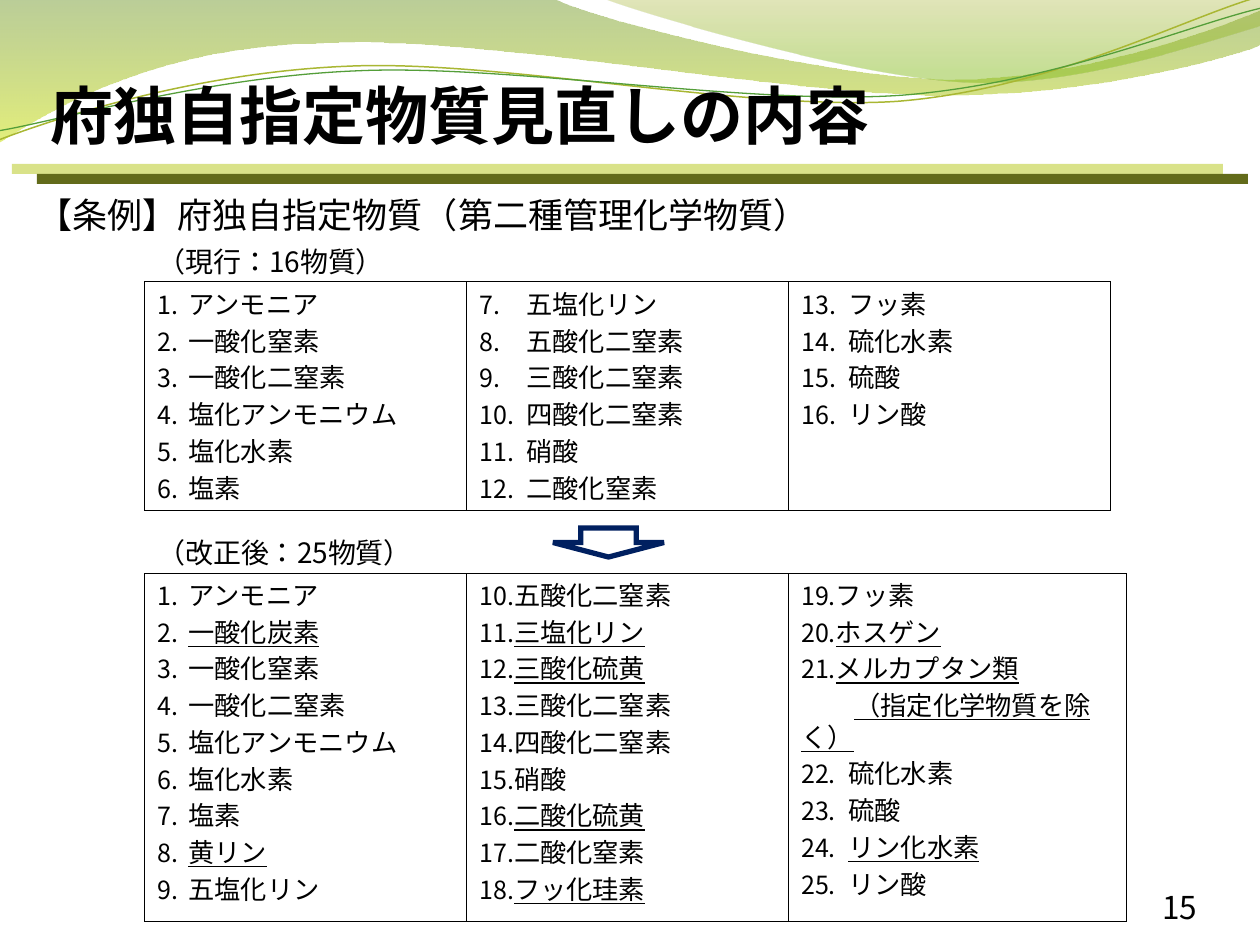
from lxml import etree
from pptx import Presentation, util as u
from pptx.dml.color import RGBColor
from pptx.enum import shapes, text
from pptx.oxml import ns

PX = 914400 / 126
FONT = "Noto Sans CJK JP"
NARROW, WIDE = 31, 47  # hanging indents of the numbered lists


def px(n):
    return u.Emu(round(n * PX))


def color(value):
    return RGBColor.from_string(value)


def sub(parent, tag, **attrs):
    return etree.SubElement(parent, ns.qn(tag), {k: str(v) for k, v in attrs.items()})


def style(s, fill=None, line=None, width=None):
    s.shadow.inherit = False
    s._element.remove(s._element.find(ns.qn("p:style")))
    if fill:
        s.fill.solid()
        s.fill.fore_color.rgb = color(fill)
    else:
        s.fill.background()
    if line:
        s.line.color.rgb = color(line)
        if width:
            s.line.width = u.Pt(width)
        sub(s.line._get_or_add_ln(), "a:miter", lim=800000)
    else:
        s.line.fill.background()
    return s


def add_shape(slide, kind, box, **fmt):
    return style(slide.shapes.add_shape(kind, *map(px, box)), **fmt)


def add_run(p, words, size=15, bold=False, underline=False):
    r = p.add_run()
    r.text = words
    f = r.font
    f.size, f.bold, f.underline, f.name = u.Pt(size), bold, underline, FONT
    f.color.rgb = color("000000")
    rPr = r._r.get_or_add_rPr()
    rPr.set("lang", "ja-JP")
    sub(rPr, "a:ea", typeface=FONT)


def add_text(slide, box, words, align="LEFT", anchor="TOP",
             inset=True, before=0, spacing=None, **fmt):
    tf = slide.shapes.add_textbox(*map(px, box)).text_frame
    tf.word_wrap = True
    tf.vertical_anchor = text.MSO_ANCHOR[anchor]
    if not inset:
        tf.margin_left = tf.margin_right = tf.margin_top = tf.margin_bottom = 0
    p = tf.paragraphs[0]
    p.alignment = text.PP_ALIGN[align]
    p.space_before = u.Pt(before)
    p.line_spacing = spacing
    add_run(p, words, **fmt)


def add_path(slide, start, segments, closed=False, **fmt):
    """Outline of straight steps (x, y) and cubic curves (two handles and an end)."""
    points = [seg[i:i + 2] for seg in segments for i in range(0, len(seg), 2)]
    builder = slide.shapes.build_freeform(*start, scale=PX)
    builder.add_line_segments(points, close=closed)
    s = builder.convert_to_shape()
    steps = iter(list(s._element.iter(ns.qn("a:lnTo"))))
    for seg in segments:
        step = next(steps)
        if len(seg) == 6:
            step.tag = ns.qn("a:cubicBezTo")
            for _ in range(2):
                handle = next(steps)
                step.append(handle[0])
                handle.getparent().remove(handle)
    return style(s, **fmt)


def add_band(slide, start, segments, stops):
    s = add_path(slide, start, segments, closed=True)
    s.fill.gradient()
    grad = s._element.spPr.find(ns.qn("a:gradFill"))
    for child in list(grad):
        grad.remove(child)
    stop_list = sub(grad, "a:gsLst")
    for pos, value, alpha in stops:
        stop = sub(stop_list, "a:gs", pos=pos * 1000)
        sub(sub(stop, "a:srgbClr", val=value), "a:alpha", val=alpha * 1000)
    sub(grad, "a:lin", ang=90 * 60000, scaled=0)


def add_waves(slide):
    add_band(slide, (0, 0),
             [(554, -1), (598, 21, 835, 79, 955, 79), (1075, 79, 1207, 33, 1260, 11),
              (1261, 45), (1239, 55, 1095, 96, 940, 95), (784, 95, 480, 35, 324, 43),
              (163, 45, 58, 105, -1, 142)],
             [(0, "69921C", 45), (100, "CCE10F", 55)])
    add_band(slide, (604, -1),
             [(641, 14, 859, 78, 968, 82), (1077, 87, 1211, 40, 1260, 26), (1260, 0)],
             [(0, "9BAA1A", 30), (80, "81BA16", 45)])
    strands = [
        ((-3, 110), [(58, 90, 198, 52, 348, 53), (499, 53, 744, 117, 896, 114),
                     (1049, 109, 1185, 45, 1260, 27)], "A9B733", 0.85),
        ((-3, 101), [(57, 94, 205, 57, 357, 58), (507, 58, 751, 112, 902, 108),
                     (1054, 103, 1188, 52, 1263, 38)], "549E39", 0.75),
    ]
    for start, segments, line, width in strands:
        s = add_path(slide, start, segments, line=line, width=width)
        s.rotation = 357.3


def add_header(slide, x, y):
    for dx, dy, fill in ((0, 0, "D9E289"), (25, 10, "626B1A")):
        add_shape(slide, shapes.MSO_SHAPE.RECTANGLE, (x + dx, y + dy, 1211, 10), fill=fill)
    add_text(slide, (x + 26, y - 95, 1255, 90), "府独自指定物質見直しの内容",
             anchor="MIDDLE", size=36, bold=True)
    add_text(slide, (x + 13, y + 19, 1186, 53), "【条例】府独自指定物質（第二種管理化学物質）",
             size=20, before=12, spacing=1.1)


def add_list(slide, box, parts):
    """Each part: first number (None for a plain line), indent, items; * underlines."""
    s = add_shape(slide, shapes.MSO_SHAPE.RECTANGLE, box, line="000000")
    tf = s.text_frame
    tf.word_wrap = True
    tf.vertical_anchor = text.MSO_ANCHOR.TOP
    lines = [(start, indent, item) for start, indent, items in parts for item in items.split()]
    for i, (start, indent, item) in enumerate(lines):
        p = tf.add_paragraph() if i else tf.paragraphs[0]
        p.alignment = text.PP_ALIGN.LEFT
        p.space_before = u.Pt(3)
        pPr = p._p.get_or_add_pPr()
        pPr.set("marL", str(px(indent) if start else 0))
        pPr.set("indent", str(px(-indent if start else indent)))
        if start:
            sub(pPr, "a:buSzPct", val=95000)
            sub(pPr, "a:buFont", typeface=FONT)
            sub(pPr, "a:buAutoNum", type="arabicPeriod", startAt=start)
        add_run(p, item.lstrip("*"), underline=item.startswith("*"))


def add_substances(slide, x, y, height, label, columns, last_width=322):
    add_text(slide, (x, y - 44, 322, 44), label, size=16)
    for i, parts in enumerate(columns):
        width = last_width if i == len(columns) - 1 else 322
        add_list(slide, (x + 322 * i, y, width, height), parts)


def main():
    prs = Presentation()
    prs.slide_width, prs.slide_height = u.Inches(10), u.Inches(7.5)
    slide = prs.slides.add_slide(prs.slide_layouts[6])

    add_waves(slide)
    add_header(slide, 12, 164)

    # Current list
    add_substances(slide, 145, 282, 229, "（現行：16物質）", [
        [(1, NARROW, "アンモニア 一酸化窒素 一酸化二窒素 塩化アンモニウム 塩化水素 塩素")],
        [(7, WIDE, "五塩化リン 五酸化二窒素 三酸化二窒素 四酸化二窒素 硝酸 二酸化窒素")],
        [(13, WIDE, "フッ素 硫化水素 硫酸 リン酸")],
    ])

    add_shape(slide, shapes.MSO_SHAPE.DOWN_ARROW, (553, 528, 111, 29),
              fill="FFFFFF", line="002060", width=3)

    # Revised list, additions underlined
    add_substances(slide, 145, 573, 349, "（改正後：25物質）", [
        [(1, NARROW, "アンモニア *一酸化炭素 一酸化窒素 一酸化二窒素 塩化アンモニウム "
                     "塩化水素 塩素 *黄リン 五塩化リン")],
        [(10, NARROW, "五酸化二窒素 *三塩化リン *三酸化硫黄 三酸化二窒素 四酸化二窒素 "
                      "硝酸 *二酸化硫黄 二酸化窒素 *フッ化珪素")],
        [(19, NARROW, "フッ素 *ホスゲン *メルカプタン類"),
         (None, 53, "*（指定化学物質を除く）"),
         (22, WIDE, "硫化水素 硫酸 *リン化水素 リン酸")],
    ], last_width=338)

    # Page number
    add_text(slide, (1092, 876, 105, 50), "15", align="RIGHT", anchor="BOTTOM",
             inset=False, size=18)
    prs.save("out.pptx")


if __name__ == "__main__":
    main()
